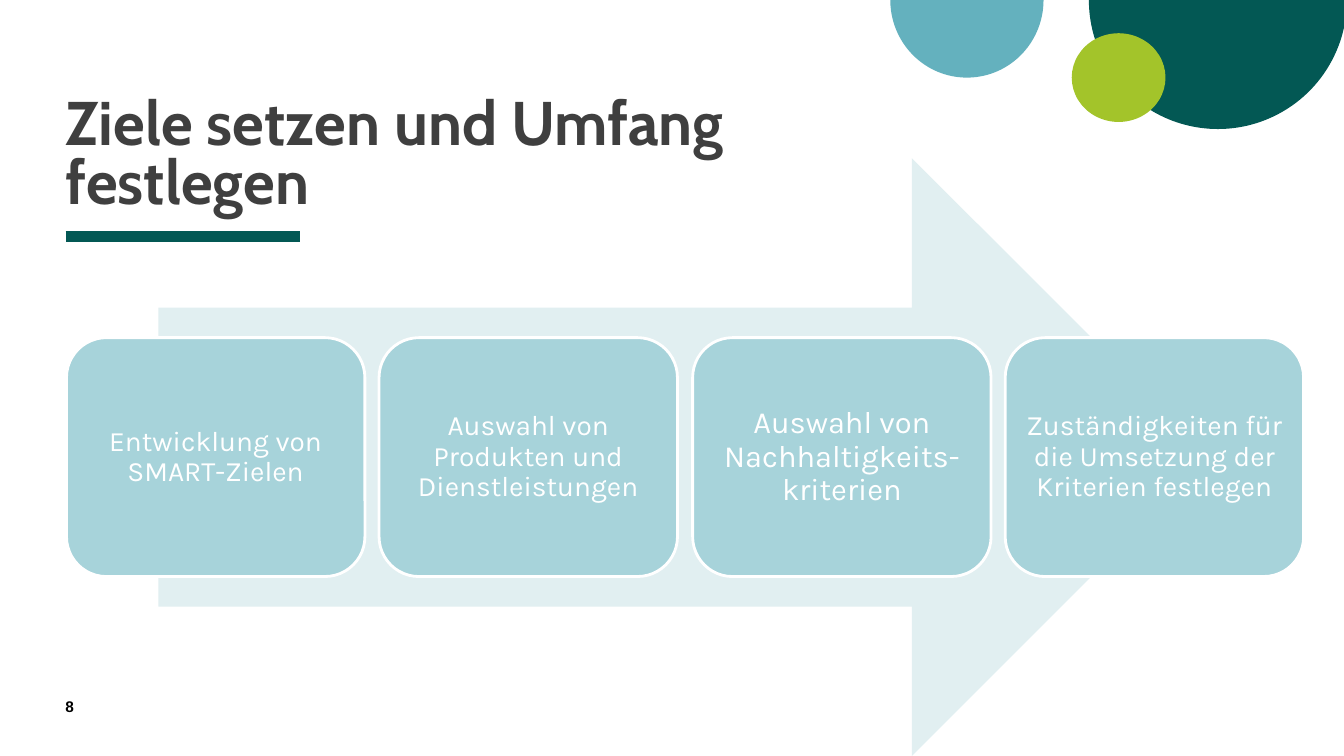
import pptx
import pptx.dml.color
import pptx.enum.shapes
import pptx.enum.text
import pptx.oxml
import pptx.util
from dataclasses import dataclass

SHAPES = pptx.enum.shapes.MSO_SHAPE
ALIGN = pptx.enum.text.PP_ALIGN
ANCHOR = pptx.enum.text.MSO_ANCHOR
EMU_PER_PX = 9144  # 100 px to the inch


@dataclass(frozen=True)
class Theme:
    dark_green: str = "035854"
    blue: str = "64B1BE"
    lime: str = "A3C42A"
    arrow: str = "E1EFF1"
    step: str = "A7D3DA"
    white: str = "FFFFFF"
    black: str = "000000"
    heading: str = "3F3F3F"
    title_font: str = "Cabin"
    step_font: str = "Karla"
    number_font: str = "Arial"
    title_size: int = 44
    step_size: int = 20
    step_size_large: int = 22
    number_size: int = 11
    rule_width: int = 8
    step_border: int = 2


THEME = Theme()

STEPS = [
    ("Entwicklung von SMART-Zielen", THEME.step_size),
    ("Auswahl von Produkten und Dienstleistungen", THEME.step_size),
    ("Auswahl von Nachhaltigkeits-\nkriterien", THEME.step_size_large),
    ("Zuständigkeiten für die Umsetzung der Kriterien festlegen", THEME.step_size),
]
FIRST_STEP_LEFT, LAST_STEP_LEFT = 66, 997


def px(length):
    return pptx.util.Emu(length * EMU_PER_PX)


def rgb(value):
    return pptx.dml.color.RGBColor.from_string(value)


def write_text(shape, text, font, size, color, bold=False, align=ALIGN.LEFT,
               anchor=ANCHOR.TOP, inset=0, line_spacing=1.0):
    frame = shape.text_frame
    frame.word_wrap = True
    frame.auto_size = pptx.enum.text.MSO_AUTO_SIZE.NONE
    frame.vertical_anchor = anchor
    frame.margin_left = frame.margin_right = px(inset)
    frame.margin_top = frame.margin_bottom = px(inset)
    paragraph = frame.paragraphs[0]
    paragraph.text = text
    paragraph.alignment = align
    paragraph.line_spacing = line_spacing
    for run in paragraph.runs:
        run.font.name = font
        run.font.size = pptx.util.Pt(size)
        run.font.bold = bold
        run.font.color.rgb = rgb(color)


def add_filled_shape(slide, kind, left, top, width, height, color, adjustments=()):
    shape = slide.shapes.add_shape(kind, px(left), px(top), px(width), px(height))
    shape.shadow.inherit = False
    for index, value in enumerate(adjustments):
        shape.adjustments[index] = value
    shape.fill.solid()
    shape.fill.fore_color.rgb = rgb(color)
    shape.line.fill.background()
    return shape


def add_rule(slide, left, right, top):
    rule = slide.shapes.add_connector(
        pptx.enum.shapes.MSO_CONNECTOR.STRAIGHT, px(left), px(top), px(right), px(top))
    rule.line.color.rgb = rgb(THEME.dark_green)
    rule.line.width = pptx.util.Pt(THEME.rule_width)
    properties = rule._element.spPr
    properties.append(properties.makeelement(pptx.oxml.ns.qn("a:effectLst"), {}))


def add_title(slide, text):
    title = slide.shapes.title
    title.left, title.top, title.width, title.height = px(65), px(41), px(742), px(174)
    write_text(title, text, THEME.title_font, THEME.title_size, THEME.heading,
               bold=True, anchor=ANCHOR.BOTTOM, line_spacing=0.8)


def add_page_number(slide, number):
    box = slide.shapes.add_textbox(px(65), px(692), px(57), px(27))
    write_text(box, number, THEME.number_font, THEME.number_size, THEME.black, bold=True)


def add_step(slide, left, text, size):
    box = add_filled_shape(slide, SHAPES.ROUNDED_RECTANGLE, left, 335, 296, 237,
                           THEME.step, [0.167])
    box.line.color.rgb = rgb(THEME.white)
    box.line.width = pptx.util.Pt(THEME.step_border)
    write_text(box, text, THEME.step_font, size, THEME.white, align=ALIGN.CENTER,
               anchor=ANCHOR.MIDDLE, inset=7, line_spacing=0.9)


def main():
    presentation = pptx.Presentation()
    presentation.slide_width, presentation.slide_height = px(1333), px(750)
    slide = presentation.slides.add_slide(presentation.slide_layouts.get_by_name("Title Only"))

    # Decoration: lower half circles at the top edge, and a small disc
    half_turn = [0, 108]
    add_filled_shape(slide, SHAPES.PIE, 1080, -128, 256, 256, THEME.dark_green, half_turn)
    add_filled_shape(slide, SHAPES.PIE, 883, -77, 152, 154, THEME.blue, half_turn)
    add_filled_shape(slide, SHAPES.OVAL, 1063, 33, 93, 88, THEME.lime)

    # Heading and page number
    add_title(slide, "Ziele setzen und Umfang festlegen")
    add_rule(slide, 65, 298, 235)
    add_page_number(slide, "8")

    # Process arrow with evenly spaced steps
    add_filled_shape(slide, SHAPES.RIGHT_ARROW, 157, 157, 1044, 593, THEME.arrow, [0.5, 0.5])
    pitch = (LAST_STEP_LEFT - FIRST_STEP_LEFT) / (len(STEPS) - 1)
    for index, (text, size) in enumerate(STEPS):
        add_step(slide, round(FIRST_STEP_LEFT + index * pitch), text, size)

    presentation.save("out.pptx")


if __name__ == "__main__":
    main()
